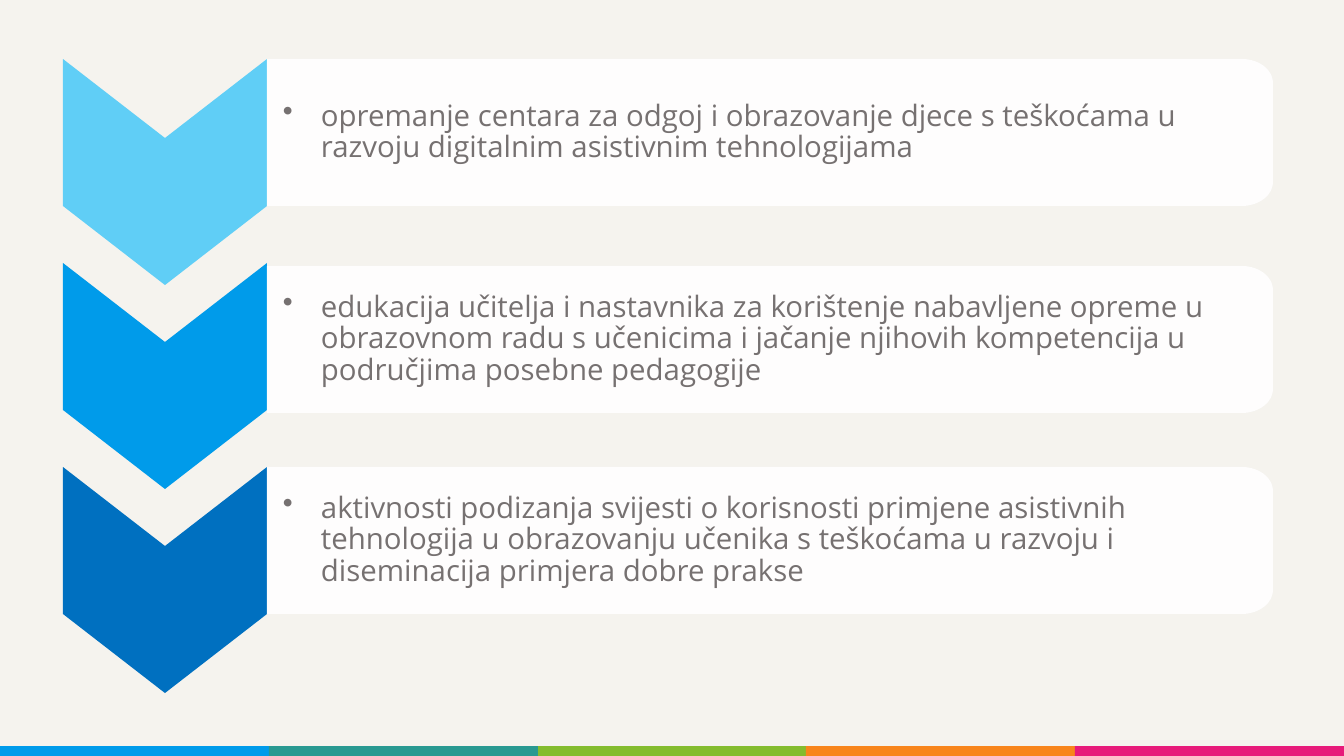
from dataclasses import dataclass
from math import cos, pi, sin

from lxml.etree import SubElement
from pptx import Presentation
from pptx.dml.color import RGBColor
from pptx.enum.shapes import MSO_SHAPE
from pptx.enum.text import MSO_ANCHOR, PP_ALIGN
from pptx.oxml.ns import qn
from pptx.shapes.autoshape import Shape
from pptx.slide import Slide
from pptx.util import Emu, Pt

SLIDE_W, SLIDE_H = 1344, 756
EMU_PER_PX = 12192000 / SLIDE_W

CREAM = RGBColor(0xF5, 0xF3, 0xEE)
WHITE = RGBColor(0xFF, 0xFF, 0xFF)
GREY = RGBColor(0x76, 0x71, 0x71)
SKY = RGBColor(0x60, 0xCE, 0xF6)
BLUE = RGBColor(0x00, 0x9B, 0xEA)
NAVY = RGBColor(0x00, 0x70, 0xC0)
TEAL = RGBColor(0x29, 0x99, 0x91)
GREEN = RGBColor(0x84, 0xBC, 0x2E)
ORANGE = RGBColor(0xF8, 0x85, 0x1B)
PINK = RGBColor(0xE7, 0x1A, 0x7A)

FOOTER_TOP = 746
FOOTER_COLOURS = (BLUE, TEAL, GREEN, ORANGE, PINK)
CHEVRON_LEFT, CHEVRON_W, CHEVRON_DEPTH = 63, 204, 79
CHEVRON_TOP, CHEVRON_PITCH = 59, 204
PANEL_LEFT, PANEL_RIGHT, BAND_H = CHEVRON_LEFT + CHEVRON_W, 1273, 147
CORNER_W, CORNER_H, CORNER_STEPS = 31, 24, 16
BULLET_INDENT = 38

Point = tuple[float, float]


@dataclass(frozen=True)
class Activity:
    panel_top: int
    colour: RGBColor
    text: str


ACTIVITIES = (
    Activity(59, SKY, "opremanje centara za odgoj i obrazovanje djece s teškoćama u "
             "razvoju digitalnim asistivnim tehnologijama"),
    Activity(266, BLUE, "edukacija učitelja i nastavnika za korištenje nabavljene opreme u "
             "obrazovnom radu s učenicima i jačanje njihovih kompetencija u "
             "područjima posebne pedagogije"),
    Activity(467, NAVY, "aktivnosti podizanja svijesti o korisnosti primjene asistivnih "
             "tehnologija u obrazovanju učenika s teškoćama u razvoju i "
             "diseminacija primjera dobre prakse"),
)


def px(length: float) -> Emu:
    return Emu(round(length * EMU_PER_PX))


def paint(shape: Shape, colour: RGBColor) -> None:
    shape.shadow.inherit = False
    shape.fill.solid()
    shape.fill.fore_color.rgb = colour
    shape.line.fill.background()


def add_block(slide: Slide, left: int, top: int, width: int, height: int, colour: RGBColor) -> None:
    block = slide.shapes.add_shape(MSO_SHAPE.RECTANGLE, px(left), px(top), px(width), px(height))
    paint(block, colour)


def add_outline(slide: Slide, points: list[Point], colour: RGBColor) -> Shape:
    start, *rest = [(px(x), px(y)) for x, y in points]
    builder = slide.shapes.build_freeform(*start)
    builder.add_line_segments(rest, close=True)
    outline = builder.convert_to_shape()
    paint(outline, colour)
    return outline


def add_chevron(slide: Slide, top: int, colour: RGBColor) -> None:
    middle, bottom = CHEVRON_LEFT + CHEVRON_W / 2, top + BAND_H
    add_outline(slide, [
        (PANEL_LEFT, top), (PANEL_LEFT, bottom), (middle, bottom + CHEVRON_DEPTH),
        (CHEVRON_LEFT, bottom), (CHEVRON_LEFT, top), (middle, top + CHEVRON_DEPTH),
    ], colour)


def add_panel(slide: Slide, activity: Activity) -> None:
    top, bottom = activity.panel_top, activity.panel_top + BAND_H
    angles = [step * pi / 2 / CORNER_STEPS for step in range(CORNER_STEPS + 1)]
    corner = [(PANEL_RIGHT - CORNER_W * (1 - sin(a)), CORNER_H * (1 - cos(a))) for a in angles]
    points = [(PANEL_LEFT, top)]
    points += [(x, top + y) for x, y in corner]
    points += [(x, bottom - y) for x, y in reversed(corner)]
    points.append((PANEL_LEFT, bottom))
    panel = add_outline(slide, points, WHITE)
    white = panel._element.spPr.find(qn("a:solidFill"))[0]
    SubElement(white, qn("a:alpha"), val="90000")

    frame = panel.text_frame
    frame.word_wrap = True
    frame.vertical_anchor = MSO_ANCHOR.MIDDLE
    frame.margin_left = px(16)
    frame.margin_top = frame.margin_right = frame.margin_bottom = px(8)
    paragraph = frame.paragraphs[0]
    paragraph.text = activity.text
    paragraph.alignment = PP_ALIGN.LEFT
    paragraph.line_spacing = 0.9
    paragraph.font.name = "Open Sans"
    paragraph.font.size = Pt(21)
    paragraph.font.color.rgb = GREY
    properties = paragraph._p.get_or_add_pPr()
    properties.set("marL", str(px(BULLET_INDENT)))
    properties.set("indent", str(-px(BULLET_INDENT)))
    bullet = properties.makeelement(qn("a:buChar"), {"char": "•"})
    properties.insert_element_before(bullet, "a:tabLst", "a:defRPr", "a:extLst")


def main() -> None:
    presentation = Presentation()
    presentation.slide_width, presentation.slide_height = px(SLIDE_W), px(SLIDE_H)
    slide = presentation.slides.add_slide(presentation.slide_layouts[6])

    edges = [round(i * SLIDE_W / len(FOOTER_COLOURS)) for i in range(len(FOOTER_COLOURS) + 1)]
    for left, right, colour in zip(edges, edges[1:], FOOTER_COLOURS):
        add_block(slide, left, FOOTER_TOP, right - left, SLIDE_H - FOOTER_TOP, colour)
    add_block(slide, 0, 0, SLIDE_W, FOOTER_TOP, CREAM)

    for row, activity in enumerate(ACTIVITIES):
        add_chevron(slide, CHEVRON_TOP + row * CHEVRON_PITCH, activity.colour)
        add_panel(slide, activity)

    presentation.save("out.pptx")


if __name__ == "__main__":
    main()
